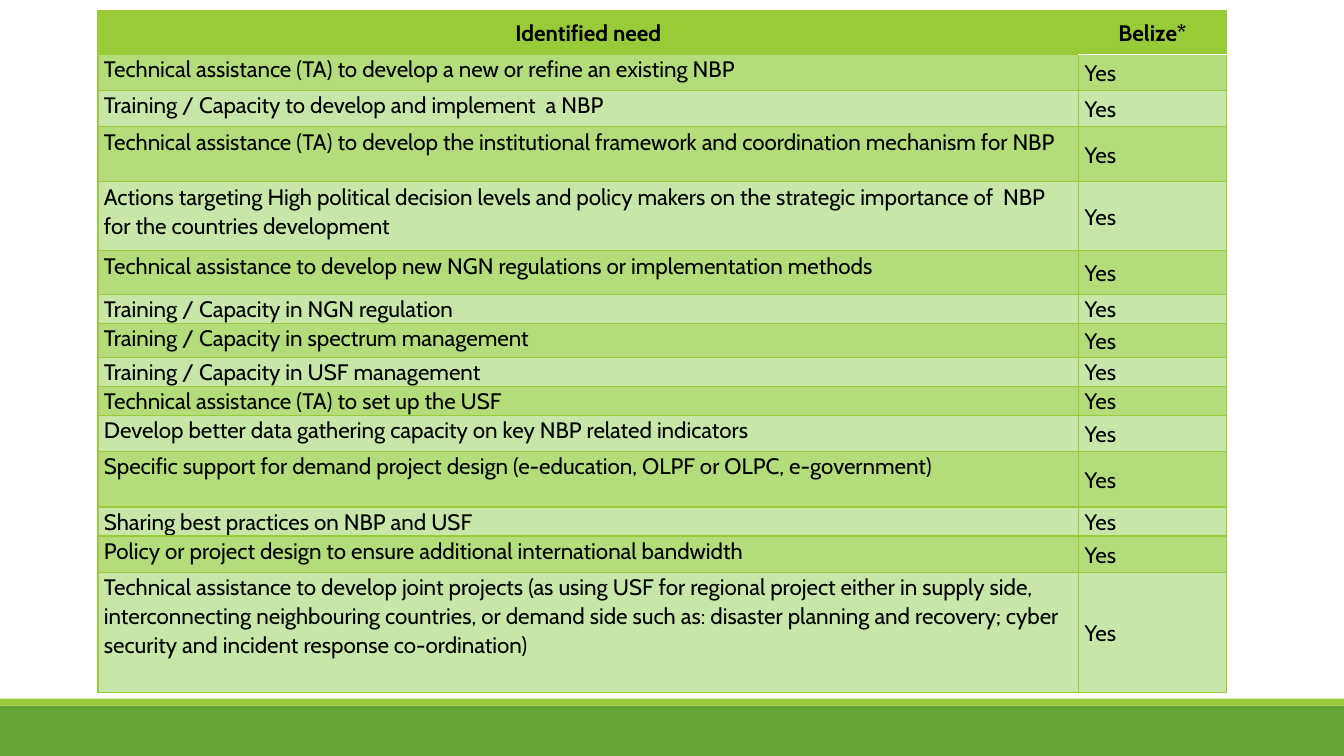
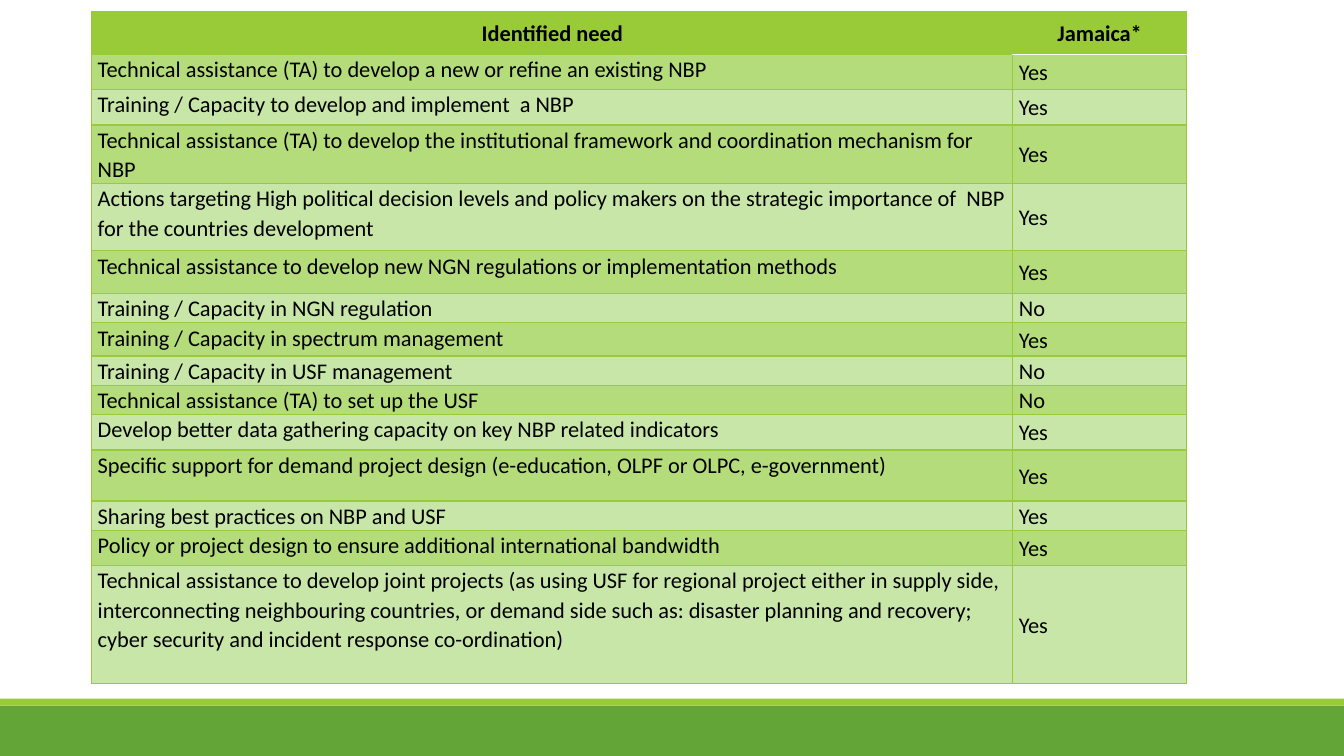
from lxml import etree
from pptx import Presentation
from pptx.dml.color import RGBColor
from pptx.enum import shapes, text
from pptx.oxml.ns import qn
from pptx.util import Pt

LEAF = RGBColor(0x63, 0xA5, 0x37)
LIME = RGBColor(0x99, 0xCB, 0x38)
ROW_DARK = RGBColor(0xB5, 0xDC, 0x7B)
ROW_LIGHT = RGBColor(0xC9, 0xE6, 0xA9)
WHITE = RGBColor(0xFF, 0xFF, 0xFF)
BLACK = RGBColor(0, 0, 0)

NEEDS = [
    "Technical assistance (TA) to develop a new or refine an existing NBP",
    "Training / Capacity to develop and implement  a NBP",
    "Technical assistance (TA) to develop the institutional framework and "
    "coordination mechanism for NBP",
    "Actions targeting High political decision levels and policy makers on the "
    "strategic importance of  NBP for the countries development",
    "Technical assistance to develop new NGN regulations or implementation methods",
    "Training / Capacity in NGN regulation",
    "Training / Capacity in spectrum management",
    "Training / Capacity in USF management",
    "Technical assistance (TA) to set up the USF",
    "Develop better data gathering capacity on key NBP related indicators",
    "Specific support for demand project design (e-education, OLPF or OLPC, "
    "e-government)",
    "Sharing best practices on NBP and USF",
    "Policy or project design to ensure additional international bandwidth",
    "Technical assistance to develop joint projects (as using USF for regional "
    "project either in supply side, interconnecting neighbouring countries, or "
    "demand side such as: disaster planning and recovery; cyber security and "
    "incident response co-ordination)",
]

# Country, font, needs answered "No", left, top, column widths, row heights
COUNTRIES = [
    ("Belize*", "Cabin", [], 70, 7.6, [700.5, 105.5],
     [31.3, 25.8, 25.8, 39.4, 49.2, 31.2, 20.2, 24.3, 20.2, 20.2,
      25.8, 39.8, 20.2, 25.8, 86]),
    ("Jamaica*", "Calibri",
     ["Training / Capacity in NGN regulation",
      "Training / Capacity in USF management",
      "Technical assistance (TA) to set up the USF"],
     65.5, 8.4, [658, 124],
     [30.5, 25.2, 25.2, 39.4, 48, 30.5, 20.2, 23.8, 20.2, 20.2,
      25.2, 36.5, 20.2, 25.2, 84.2]),
]


def set_border(cell, side, color, width):
    line = etree.SubElement(cell._tc.get_or_add_tcPr(), qn("a:ln" + side),
                            w=str(Pt(width)))
    fill = etree.SubElement(line, qn("a:solidFill"))
    etree.SubElement(fill, qn("a:srgbClr"), val=str(color))


deck = Presentation()
deck.slide_width, deck.slide_height = Pt(960), Pt(540)
blank = deck.slide_layouts[6]
pages = [deck.slides.add_slide(blank) for country in COUNTRIES]

# Footer bands, moved to the master so that every slide shows them
master_tree = deck.slide_master.element.cSld.spTree
for number, (top, height, color) in enumerate([(504, 36, LEAF), (499, 5, LIME)]):
    band = pages[0].shapes.add_shape(shapes.MSO_SHAPE.RECTANGLE,
                                     0, Pt(top), Pt(960), Pt(height))
    band.shadow.inherit = False
    band.fill.solid()
    band.fill.fore_color.rgb = color
    band.line.fill.background()
    next(band.element.iter(qn("p:cNvPr"))).set("id", str(100 + number))
    master_tree.append(band.element)

# One table of needs per country
for page, (country, font, refused, left, top, widths, heights) in zip(pages, COUNTRIES):
    table = page.shapes.add_table(len(heights), 2, Pt(left), Pt(top),
                                  Pt(sum(widths)), Pt(sum(heights))).table
    table.horz_banding = False
    for column, width in zip(table.columns, widths):
        column.width = Pt(width)
    for row, height in zip(table.rows, heights):
        row.height = Pt(height)

    rows = [("Identified need", country)]
    rows += [(need, "No" if need in refused else "Yes") for need in NEEDS]
    for r, values in enumerate(rows):
        for c, value in enumerate(values):
            cell = table.cell(r, c)
            header = r == 0

            # A white rule parts the country name from its answers
            for side in "LRTB":
                white = c == 1 and (r, side) in [(0, "B"), (1, "T")]
                set_border(cell, side, WHITE if white else LIME, 1.25 if white else 1)
            cell.fill.solid()
            cell.fill.fore_color.rgb = LIME if header else ROW_DARK if r % 2 else ROW_LIGHT

            cell.margin_left = cell.margin_right = Pt(4.3)
            cell.margin_top = cell.margin_bottom = 0
            centred = header or c == 1
            cell.vertical_anchor = (text.MSO_ANCHOR.MIDDLE if centred
                                    else text.MSO_ANCHOR.TOP)
            para = cell.text_frame.paragraphs[0]
            para.text = value
            para.alignment = text.PP_ALIGN.CENTER if header else text.PP_ALIGN.LEFT
            para.line_spacing = 1.07
            para.space_after = Pt(8)
            span = para.runs[0]
            span.font.name = font
            span.font.size = Pt(16)
            span.font.bold = header
            span.font.color.rgb = BLACK

deck.save("out.pptx")
